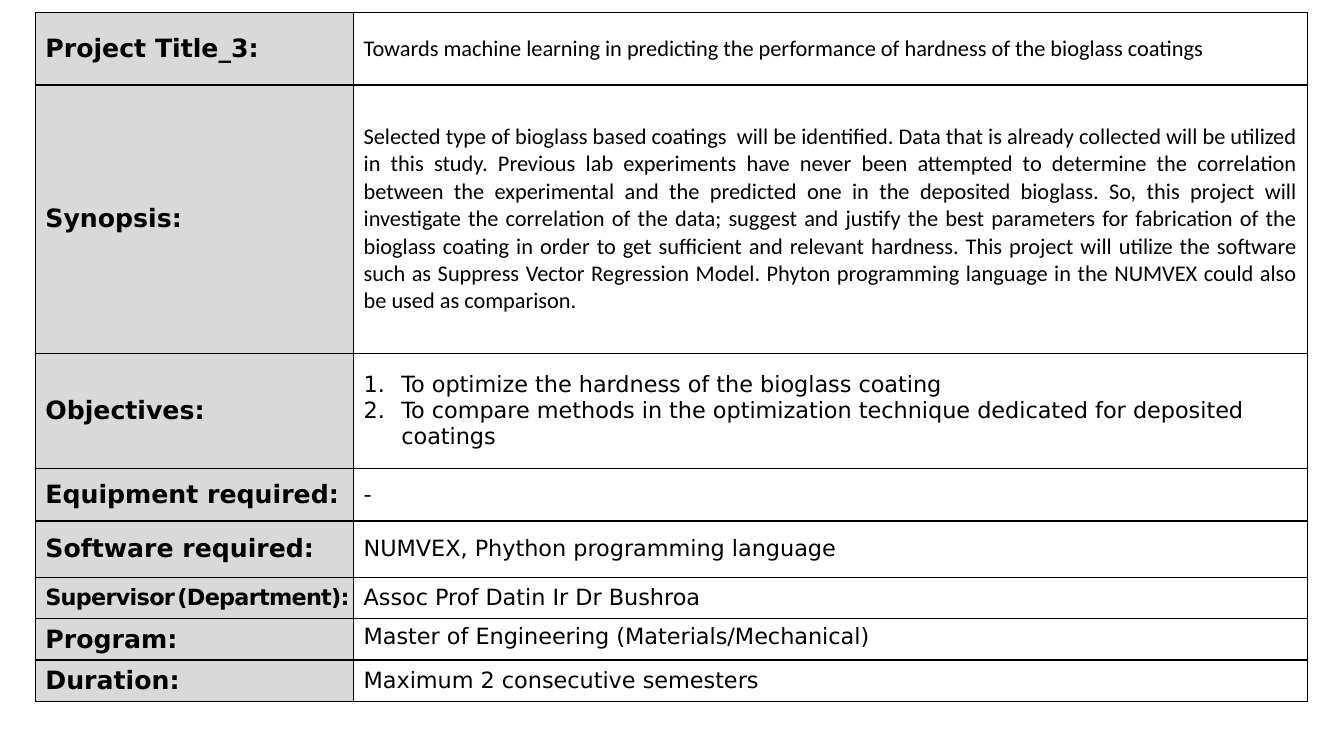
from lxml import etree
from pptx import Presentation
from pptx import util as u
from pptx.dml.color import RGBColor
from pptx.enum import text
from pptx.oxml import ns

# Content: label, lines of detail, row height in cm
SYNOPSIS = (
    "Selected type of bioglass based coatings  will be identified. Data that is already "
    "collected will be utilized in this study. Previous lab experiments have never been "
    "attempted to determine the correlation between the experimental and the predicted one "
    "in the deposited bioglass. So, this project will investigate the correlation of the "
    "data; suggest and justify the best parameters for fabrication of the bioglass coating "
    "in order to get sufficient and relevant hardness. This project will utilize the "
    "software such as Suppress Vector Regression Model. Phyton programming language in the "
    "NUMVEX could also be used as comparison."
)
ROWS = [
    ("Project Title_3:", ["Towards machine learning in predicting the performance of "
                          "hardness of the bioglass coatings"], 1.83),
    ("Synopsis:", [SYNOPSIS], 6.76),
    ("Objectives:", ["To optimize the hardness of the bioglass coating",
                     "To compare methods in the optimization technique dedicated for "
                     "deposited coatings"], 2.9),
    ("Equipment required:", ["-"], 1.33),
    ("Software required:", ["NUMVEX, Phython programming language"], 1.42),
    ("Supervisor (Department):", ["Assoc Prof Datin Ir Dr Bushroa"], 1.04),
    ("Program:", ["Master of Engineering (Materials/Mechanical)"], 1.04),
    ("Duration:", ["Maximum 2 consecutive semesters"], 1.04),
]
CALIBRI_ROWS = ("Project Title_3:", "Synopsis:")
COLUMN_WIDTHS = (8.02, 24.04)
LEFT, TOP = 0.89, 0.31

BLACK = RGBColor(0x00, 0x00, 0x00)
WHITE = RGBColor(0xFF, 0xFF, 0xFF)
LABEL_GREY = RGBColor(0xD9, 0xD9, 0xD9)
LABEL_FONT = {"name": "DejaVu Sans", "size": u.Pt(18), "bold": True}
DETAIL_FONT = {"name": "DejaVu Sans", "size": u.Pt(16), "bold": False}


def add_run(paragraph, words, font_format):
    run = paragraph.add_run()
    run.text = words
    for name, value in font_format.items():
        setattr(run.font, name, value)
    run.font.color.rgb = BLACK
    return run


def format_cell(cell, colour):
    cell.vertical_anchor = text.MSO_ANCHOR.MIDDLE
    properties = cell._tc.get_or_add_tcPr()
    for side in ("a:lnL", "a:lnR", "a:lnT", "a:lnB"):
        line = etree.SubElement(properties, ns.qn(side), w=str(u.Pt(1)))
        fill = etree.SubElement(line, ns.qn("a:solidFill"))
        etree.SubElement(fill, ns.qn("a:srgbClr"), val=str(BLACK))
    cell.fill.solid()
    cell.fill.fore_color.rgb = colour


def number_paragraph(paragraph):
    properties = paragraph._p.get_or_add_pPr()
    indent = u.Cm(0.95)
    properties.set("marL", str(indent))
    properties.set("indent", str(-indent))
    etree.SubElement(properties, ns.qn("a:buFont"), typeface="+mj-lt")
    etree.SubElement(properties, ns.qn("a:buAutoNum"), type="arabicPeriod")


def fill_label(cell, label):
    format_cell(cell, LABEL_GREY)
    paragraph = cell.text_frame.paragraphs[0]
    if not label.startswith("Supervisor"):
        add_run(paragraph, label, LABEL_FONT)
        return
    # The longest label is tightened to stay on one line
    cell.margin_right = 0
    for words, size in zip(label.partition(" "), (16, 5, 16)):
        run = add_run(paragraph, words, {**LABEL_FONT, "size": u.Pt(size)})
        run.font._element.set("spc", "-50")


def fill_detail(cell, label, lines):
    format_cell(cell, WHITE)
    font_format = dict(DETAIL_FONT)
    if label in CALIBRI_ROWS:
        font_format["name"] = "Calibri"
    if label == "Program:":
        cell.vertical_anchor = text.MSO_ANCHOR.TOP
    frame = cell.text_frame
    for index, words in enumerate(lines):
        paragraph = frame.add_paragraph() if index else frame.paragraphs[0]
        if label == "Synopsis:":
            paragraph.alignment = text.PP_ALIGN.JUSTIFY
        if len(lines) > 1:
            number_paragraph(paragraph)
        add_run(paragraph, words, font_format)


def main():
    presentation = Presentation()
    presentation.slide_width, presentation.slide_height = u.Cm(33.87), u.Cm(19.05)
    slide = presentation.slides.add_slide(presentation.slide_layouts[6])

    # Project table
    height = sum(row[2] for row in ROWS)
    table = slide.shapes.add_table(
        len(ROWS), len(COLUMN_WIDTHS), u.Cm(LEFT), u.Cm(TOP),
        u.Cm(sum(COLUMN_WIDTHS)), u.Cm(height)).table
    table.first_row = table.horz_banding = False
    for column, width in zip(table.columns, COLUMN_WIDTHS):
        column.width = u.Cm(width)

    # Rows
    for index, (label, lines, row_height) in enumerate(ROWS):
        table.rows[index].height = u.Cm(row_height)
        fill_label(table.cell(index, 0), label)
        fill_detail(table.cell(index, 1), label, lines)

    presentation.save("out.pptx")


if __name__ == "__main__":
    main()
